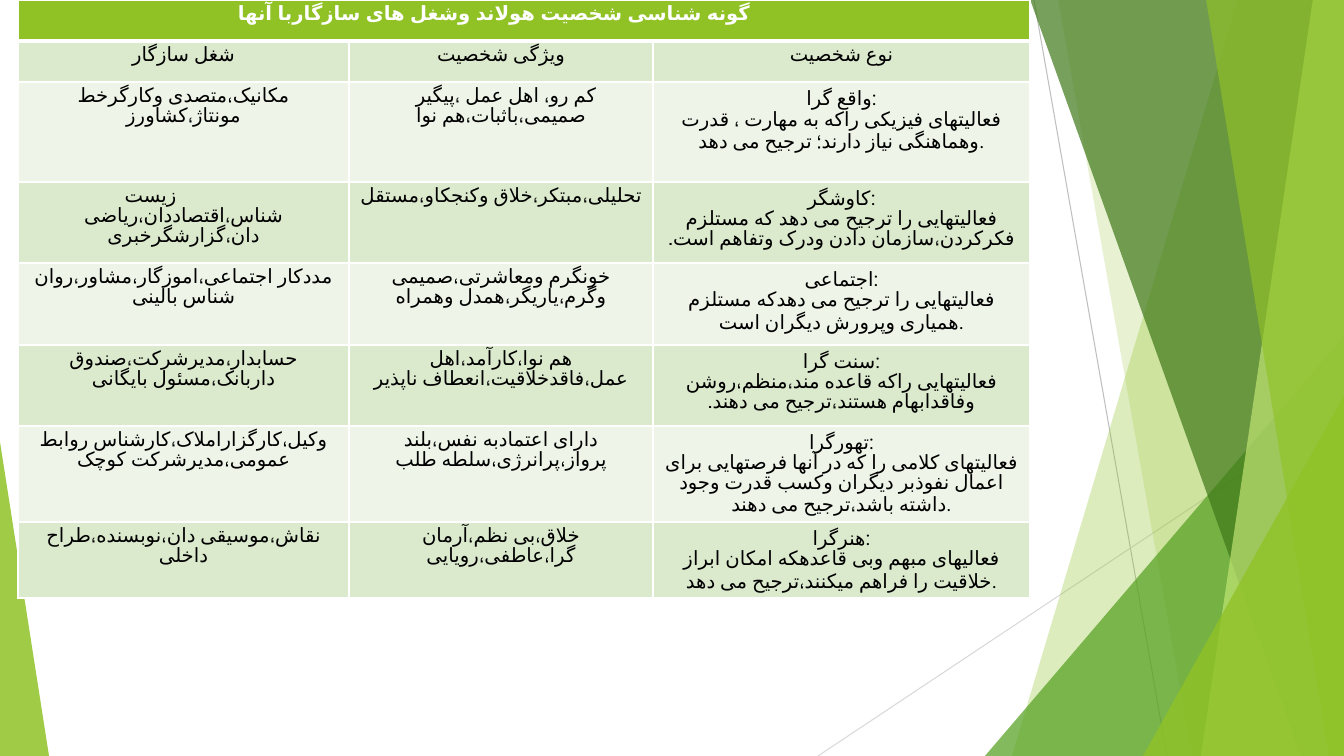
from dataclasses import dataclass

from lxml import etree
from pptx import Presentation
from pptx import util as u
from pptx.dml.color import RGBColor
from pptx.enum import shapes, text
from pptx.oxml.ns import qn

WIDTH, HEIGHT = 1344, 756
GREEN, LEAF, FOREST, LIME = "90C226", "54A021", "3F7819", "C0E474"
BANDS = "DBE9CD", "EEF4E8"
BORDERS = "lnL", "lnR", "lnT", "lnB"


def px(length):
    return u.Emu(round(length * 12192000 / WIDTH))


def color(value):
    return RGBColor.from_string(value)


@dataclass
class Line:
    """One paragraph; indent in px moves the start of its first line."""
    text: str
    rtl: bool = False
    indent: int = 0


def rtl(words, indent=0):
    return Line(words, True, indent)


class Slide:
    font = "Roboto"
    size = u.Pt(14)
    language = "fa-IR"

    def __init__(self, page):
        self.page = page

    def line(self, start, end, stroke):
        line = self.page.shapes.add_connector(
            shapes.MSO_CONNECTOR.STRAIGHT, *map(px, start + end))
        line.line.color.rgb = color(stroke)
        line.line.width = u.Pt(0.75)
        etree.SubElement(line._element.spPr, qn("a:effectLst"))

    def paint(self, shape, fill, opacity):
        shape.shadow.inherit = False
        shape.line.fill.background()
        shape.fill.solid()
        shape.fill.fore_color.rgb = color(fill)
        tone = shape._element.spPr.find(qn("a:solidFill"))[0]
        etree.SubElement(tone, qn("a:alpha"), val=str(opacity * 1000))

    def facet(self, top, bottom, fill, opacity):
        """Fill from a slanted edge to the right side of the slide."""
        builder = self.page.shapes.build_freeform(px(top), px(-1), scale=1.0)
        corners = [(WIDTH, -1), (WIDTH, HEIGHT), (bottom, HEIGHT)]
        builder.add_line_segments([(px(x), px(y)) for x, y in corners])
        self.paint(builder.convert_to_shape(), fill, opacity)

    def triangle(self, left, top, width, apex, fill, opacity):
        """Stand a triangle on the bottom edge of the slide."""
        shape = self.page.shapes.add_shape(
            shapes.MSO_SHAPE.ISOSCELES_TRIANGLE,
            *map(px, (left, top, width, HEIGHT - top)))
        shape.adjustments[0] = apex
        self.paint(shape, fill, opacity)

    def table(self, left, top, columns, heights):
        frame = self.page.shapes.add_table(
            len(heights), len(columns), px(left), px(top),
            px(sum(columns)), px(sum(heights)))
        table = frame.table
        table.horz_banding = False
        for column, width in zip(table.columns, columns):
            column.width = px(width)
        for row, height in zip(table.rows, heights):
            row.height = px(height)
        return table

    def cell(self, cell, lines, fill, ink="000000", bold=False, bottom=1):
        for side in BORDERS:
            points = bottom if side == "lnB" else 1
            border = etree.SubElement(cell._tc.get_or_add_tcPr(),
                                      qn("a:" + side), w=str(u.Pt(points)))
            paint = etree.SubElement(border, qn("a:solidFill"))
            etree.SubElement(paint, qn("a:srgbClr"), val="FFFFFF")
        cell.fill.solid()
        cell.fill.fore_color.rgb = color(fill)
        for index, line in enumerate(lines):
            frame = cell.text_frame
            para = frame.add_paragraph() if index else frame.paragraphs[0]
            para.text = line.text
            para.alignment = text.PP_ALIGN.CENTER
            para.font.name, para.font.size = self.font, self.size
            para.font.bold = bold
            para.font.color.rgb = color(ink)
            for span in para.runs:
                span._r.get_or_add_rPr().set("lang", self.language)
            properties = para._p.get_or_add_pPr()
            if line.rtl:
                properties.set("rtl", "1")
            if line.indent:
                properties.set("marL", "0")
                properties.set("indent", str(px(line.indent)))


TITLE = "گونه شناسی شخصیت هولاند وشغل های سازگاربا آنها"
ROWS = [
    ([Line("شغل سازگار")], [Line("ویژگی شخصیت")], [Line("نوع شخصیت")]),
    ([rtl("مکانیک،متصدی وکارگرخط مونتاژ،کشاورز")],
     [Line("کم رو، اهل عمل ،پیگیر", indent=10), Line("صمیمی،باثبات،هم نوا")],
     [Line("واقع گرا:"),
      Line("فعالیتهای فیزیکی راکه به مهارت ، قدرت وهماهنگی نیاز دارند؛ ترجیح می دهد.")]),
    ([rtl("زیست شناس،اقتصاددان،ریاضی دان،گزارشگرخبری", indent=66)],
     [rtl("تحلیلی،مبتکر،خلاق وکنجکاو،مستقل")],
     [Line("کاوشگر:"),
      rtl("فعالیتهایی را ترجیح می دهد که مستلزم فکرکردن،سازمان دادن ودرک وتفاهم است.")]),
    ([rtl("مددکار اجتماعی،اموزگار،مشاور،روان شناس بالینی")],
     [rtl("خونگرم ومعاشرتی،صمیمی وگرم،یاریگر،همدل وهمراه")],
     [Line("اجتماعی:"),
      Line("فعالیتهایی را ترجیح می دهدکه مستلزم همیاری وپرورش دیگران است.")]),
    ([rtl("حسابدار،مدیرشرکت،صندوق داربانک،مسئول بایگانی")],
     [rtl("هم نوا،کارآمد،اهل عمل،فاقدخلاقیت،انعطاف ناپذیر")],
     [Line("سنت گرا:"),
      rtl("فعالیتهایی راکه قاعده مند،منظم،روشن وفاقدابهام هستند،ترجیح می دهند.")]),
    ([Line("وکیل،کارگزاراملاک،کارشناس روابط عمومی،مدیرشرکت کوچک")],
     [Line("دارای اعتمادبه نفس،بلند پرواز،پرانرژی،سلطه طلب")],
     [Line("تهورگرا:"),
      Line("فعالیتهای کلامی را که در آنها فرصتهایی برای اعمال نفوذبر دیگران "
           "وکسب قدرت وجود داشته باشد،ترجیح می دهند.")]),
    ([Line("نقاش،موسیقی دان،نوبسنده،طراح داخلی")],
     [Line("خلاق،بی نظم،آرمان گرا،عاطفی،رویایی")],
     [Line("هنرگرا:"),
      Line("فعالیهای مبهم وبی قاعدهکه امکان ابراز خلاقیت را فراهم میکنند،ترجیح می دهد.")]),
]


def draw_background(slide):
    slide.line((1034, 0), (1167, HEIGHT), "BFBFBF")
    slide.line((WIDTH, 406), (818, HEIGHT), "D9D9D9")
    slide.facet(1238, 1012, GREEN, 30)
    slide.facet(1058, 1192, GREEN, 20)
    slide.triangle(985, 336, 359, 1, LEAF, 72)
    slide.facet(1030, 1301, FOREST, 70)
    slide.facet(1313, 1201, LIME, 70)
    slide.facet(1206, 1329, GREEN, 65)
    slide.triangle(1143, 396, 201, 1, GREEN, 80)
    slide.triangle(0, 442, 49, 0, GREEN, 85)


def draw_personality_table(slide):
    table = slide.table(18, 0, (331, 304, 377),
                        (41, 41, 100, 81, 82, 81, 96, 76))
    heading = table.cell(0, 0)
    heading.merge(table.cell(0, 2))
    heading.margin_right = px(70)
    slide.cell(heading, [Line(TITLE)], GREEN, "FFFFFF", bold=True, bottom=3)
    for row, cells in enumerate(ROWS, start=1):
        for column, lines in enumerate(cells):
            slide.cell(table.cell(row, column), lines, BANDS[(row - 1) % 2])


def main():
    deck = Presentation()
    deck.slide_width, deck.slide_height = px(WIDTH), px(HEIGHT)
    slide = Slide(deck.slides.add_slide(deck.slide_layouts[6]))
    draw_background(slide)
    draw_personality_table(slide)
    deck.save("out.pptx")


if __name__ == "__main__":
    main()
